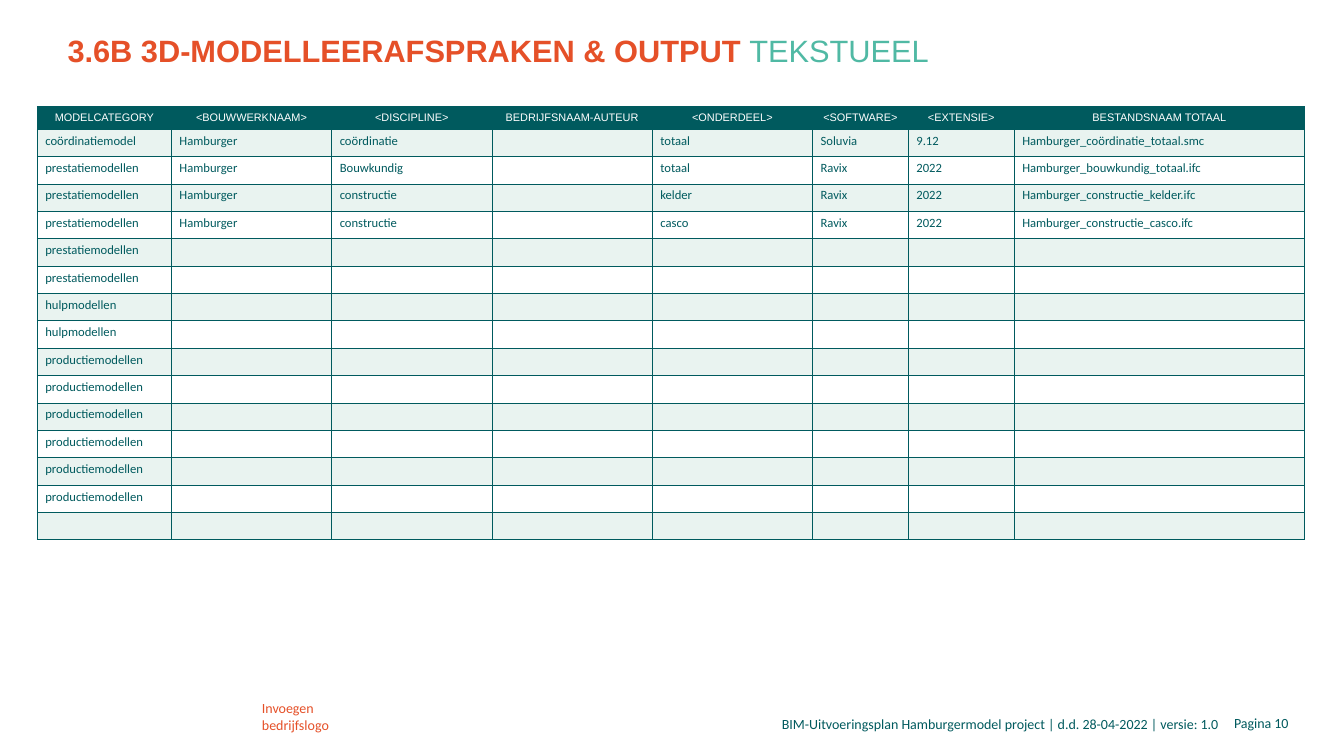
"""Build the slide with the table of 3D model naming agreements."""
from lxml.etree import SubElement
from pptx import Presentation
from pptx.dml.color import RGBColor
from pptx.enum.text import MSO_ANCHOR, MSO_AUTO_SIZE, PP_ALIGN
from pptx.oxml.ns import qn
from pptx.util import Inches, Pt

TEAL = RGBColor(0x00, 0x5A, 0x5E)
MINT = RGBColor(0x50, 0xB9, 0xA4)
PALE = RGBColor(0xE9, 0xF3, 0xF0)
ORANGE = RGBColor(0xE5, 0x50, 0x28)
WHITE = RGBColor(0xFF, 0xFF, 0xFF)

COL_WIDTHS = [1.33, 1.59, 1.59, 1.59, 1.59, 0.95, 1.05, 2.88]
HEADER = ["MODELCATEGORY", "<BOUWWERKNAAM>", "<DISCIPLINE>", "BEDRIJFSNAAM-AUTEUR",
          "<ONDERDEEL>", "<SOFTWARE>", "<EXTENSIE>", "BESTANDSNAAM TOTAAL"]
MODELS = [
    ["coördinatiemodel", "Hamburger", "coördinatie", "", "totaal", "Soluvia", "9.12",
     "Hamburger_coördinatie_totaal.smc"],
    ["prestatiemodellen", "Hamburger", "Bouwkundig", "", "totaal", "Ravix", "2022",
     "Hamburger_bouwkundig_totaal.ifc"],
    ["prestatiemodellen", "Hamburger", "constructie", "", "kelder", "Ravix", "2022",
     "Hamburger_constructie_kelder.ifc"],
    ["prestatiemodellen", "Hamburger", "constructie", "", "casco", "Ravix", "2022",
     "Hamburger_constructie_casco.ifc"],
]
OPEN_CATEGORIES = (["prestatiemodellen"] * 2 + ["hulpmodellen"] * 2
                   + ["productiemodellen"] * 6 + [""])
HEADER_HEIGHT = Inches(0.22)
BODY_HEIGHT = Inches(4.08)


def style_run(r, size, color, name="Calibri", bold=False):
    """Set the font of one run."""
    r.font.size = Pt(size)
    r.font.name = name
    r.font.bold = bold
    r.font.color.rgb = color


def add_title(slide):
    """Place the two-tone title in its placeholder."""
    sp = slide.shapes.title
    sp.left, sp.top, sp.width, sp.height = Inches(0.67), Inches(0.26), Inches(11.33), Inches(0.47)
    tf = sp.text_frame
    tf.auto_size = MSO_AUTO_SIZE.NONE
    tf.margin_left = 0
    tf.vertical_anchor = MSO_ANCHOR.MIDDLE
    p = tf.paragraphs[0]
    p.alignment = PP_ALIGN.LEFT
    for text, color, bold in (("3.6B 3D-MODELLEERAFSPRAKEN & OUTPUT ", ORANGE, True),
                              ("TEKSTUEEL", MINT, False)):
        r = p.add_run()
        r.text = text
        style_run(r, 22, color, "Arial", bold)


def add_label(slide, text, left, top, width, height, color=TEAL,
              align=PP_ALIGN.LEFT, margins=(0.1, 0.1)):
    """Add a footer text box."""
    sp = slide.shapes.add_textbox(Inches(left), Inches(top), Inches(width), Inches(height))
    tf = sp.text_frame
    tf.word_wrap = True
    tf.margin_left, tf.margin_right = (Inches(m) for m in margins)
    tf.text = text
    for p in tf.paragraphs:
        p.alignment = align
        style_run(p.runs[0], 10, color)


def add_borders(cell):
    """Draw a thin teal line on all sides of a cell."""
    tc_pr = cell._tc.get_or_add_tcPr()
    for side in ("a:lnL", "a:lnR", "a:lnT", "a:lnB"):
        ln = SubElement(tc_pr, qn(side), w=str(Pt(0.75)))
        fill = SubElement(ln, qn("a:solidFill"))
        SubElement(fill, qn("a:srgbClr"), val=str(TEAL))


def fill_cell(cell, text, fill, header):
    """Write and format one table cell."""
    add_borders(cell)
    cell.fill.solid()
    cell.fill.fore_color.rgb = fill
    p = cell.text_frame.paragraphs[0]
    if header:
        cell.vertical_anchor = MSO_ANCHOR.MIDDLE
        p.alignment = PP_ALIGN.CENTER
    else:
        cell.margin_left = cell.margin_right = Inches(0.08)
        cell.margin_top = cell.margin_bottom = Inches(0.04)
    if text:
        p.text = text
        if header:
            style_run(p.runs[0], 7.8, WHITE, "Arial")
        else:
            style_run(p.runs[0], 9, TEAL)
    else:
        SubElement(p._p, qn("a:endParaRPr"), sz="900")


def add_model_table(slide):
    """Add the table with its header and alternating rows."""
    blanks = [""] * (len(HEADER) - 1)
    rows = [HEADER] + MODELS + [[category] + blanks for category in OPEN_CATEGORIES]
    row_height = BODY_HEIGHT // (len(rows) - 1)
    table = slide.shapes.add_table(len(rows), len(HEADER), Inches(0.37), Inches(1.06),
                                   Inches(sum(COL_WIDTHS)), HEADER_HEIGHT + BODY_HEIGHT).table
    table.horz_banding = False
    for column, width in zip(table.columns, COL_WIDTHS):
        column.width = Inches(width)
    for i, values in enumerate(rows):
        table.rows[i].height = row_height if i else HEADER_HEIGHT
        fill = TEAL if i == 0 else PALE if i % 2 else WHITE
        for j, text in enumerate(values):
            fill_cell(table.cell(i, j), text, fill, i == 0)


def main():
    """Build and save the presentation."""
    prs = Presentation()
    prs.slide_width, prs.slide_height = Inches(13.33), Inches(7.5)
    slide = prs.slides.add_slide(prs.slide_layouts[5])
    add_title(slide)
    add_model_table(slide)
    add_label(slide, "BIM-Uitvoeringsplan Hamburgermodel project | d.d. 28-04-2022 | versie: 1.0",
              6.77, 7.05, 5.41, 0.27, align=PP_ALIGN.RIGHT)
    add_label(slide, "Invoegen\nbedrijfslogo", 2.5, 6.89, 1.14, 0.44, ORANGE)
    add_label(slide, "Pagina", 12.07, 7.04, 0.54, 0.27, align=PP_ALIGN.RIGHT, margins=(0, 0))
    add_label(slide, "10", 12.61, 7.04, 0.44, 0.27, margins=(0.03, 0))
    prs.save("out.pptx")


if __name__ == "__main__":
    main()
